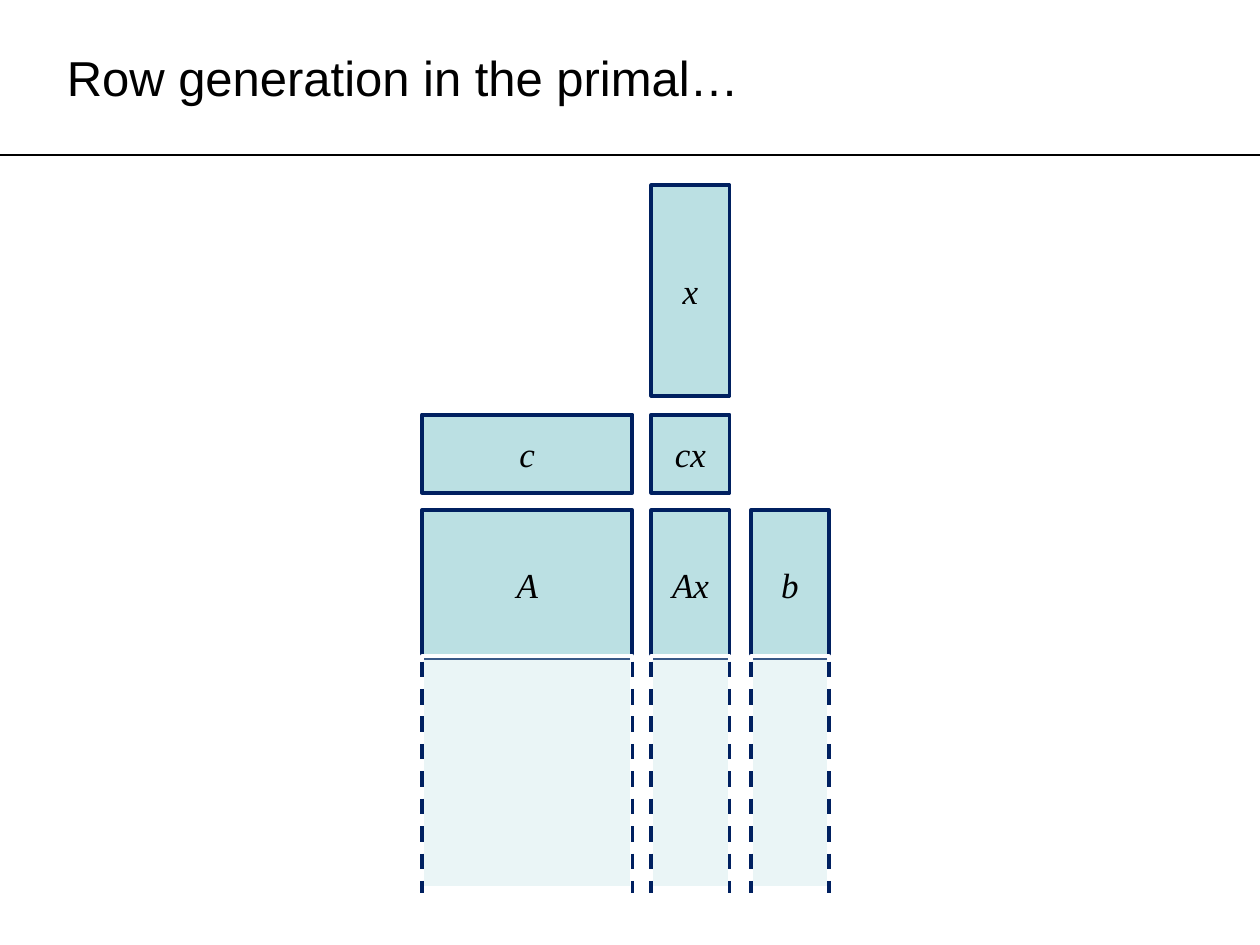
from dataclasses import dataclass

from lxml import etree
from pptx import Presentation
from pptx.dml.color import RGBColor
from pptx.enum.dml import MSO_LINE
from pptx.enum.shapes import MSO_CONNECTOR, MSO_SHAPE
from pptx.enum.text import MSO_ANCHOR, PP_ALIGN
from pptx.oxml.ns import qn
from pptx.util import Inches, Pt

STRAIGHT = MSO_CONNECTOR.STRAIGHT
RECTANGLE = MSO_SHAPE.RECTANGLE
DASH = MSO_LINE.DASH
MIDDLE = MSO_ANCHOR.MIDDLE
LEFT = PP_ALIGN.LEFT
CENTER = PP_ALIGN.CENTER


@dataclass(frozen=True)
class Theme:
    black: RGBColor = RGBColor.from_string("000000")
    white: RGBColor = RGBColor.from_string("FFFFFF")
    navy: RGBColor = RGBColor.from_string("002060")
    teal: RGBColor = RGBColor.from_string("BBE0E3")
    title_font: str = "Arial"
    math_font: str = "Times New Roman"
    title_size: Pt = Pt(28)
    math_size: Pt = Pt(20)
    rule_width: Pt = Pt(0.75)
    border_width: Pt = Pt(2.25)


THEME = Theme()

NARROW = 0.62
WIDE = 1.67
COLUMNS = {"A": (3.35, WIDE), "x": (5.17, NARROW), "b": (5.96, NARROW)}
ROWS = {"x": (1.47, WIDE), "c": (3.29, NARROW), "A": (4.05, 1.17)}
BLOCKS = [
    ("A", "A", "A"),
    ("Ax", "x", "A"),
    ("b", "b", "A"),
    ("cx", "x", "c"),
    ("c", "A", "c"),
    ("x", "x", "x"),
]
HIDDEN_TOP = 5.21
HIDDEN_HEIGHT = 1.84
DASH_TOP = 5.25


def format_text(paragraph, font_name, size, alignment, italic=False):
    paragraph.alignment = alignment
    paragraph.font.name = font_name
    paragraph.font.size = size
    paragraph.font.italic = italic
    paragraph.font.color.rgb = THEME.black


def set_title(slide, text):
    title = slide.shapes.title
    title.left, title.top = Inches(0.43), Inches(0.07)
    title.width, title.height = Inches(9.14), Inches(1.08)
    title.text_frame.text = text
    title.text_frame.vertical_anchor = MIDDLE
    format_text(title.text_frame.paragraphs[0], THEME.title_font, THEME.title_size, LEFT)


def add_line(slide, start, end, color, width, dash=None):
    line = slide.shapes.add_connector(STRAIGHT, *map(Inches, start + end))
    line.line.color.rgb = color
    line.line.width = width
    if dash is not None:
        line.line.dash_style = dash
    etree.SubElement(line.line._get_or_add_ln().getparent(), qn("a:effectLst"))


def add_box(slide, column, row, border):
    left, width = column
    top, height = row
    box = slide.shapes.add_shape(RECTANGLE, *map(Inches, (left, top, width, height)))
    box.shadow.inherit = False
    box.fill.solid()
    box.fill.fore_color.rgb = THEME.teal
    box.line.color.rgb = border
    box.line.width = THEME.border_width
    return box


def add_block(slide, label, column, row):
    frame = add_box(slide, column, row, THEME.navy).text_frame
    frame.word_wrap = False
    frame.vertical_anchor = MIDDLE
    frame.text = label
    format_text(frame.paragraphs[0], THEME.math_font, THEME.math_size, CENTER, italic=True)


def add_hidden_rows(slide, column):
    box = add_box(slide, column, (HIDDEN_TOP, HIDDEN_HEIGHT), THEME.white)
    color = box.element.spPr.find(qn("a:solidFill")).find(qn("a:srgbClr"))
    etree.SubElement(color, qn("a:alpha"), val="30000")


def add_dashed_sides(slide, column):
    left, width = column
    for x in (left, left + width):
        add_line(slide, (x, DASH_TOP), (x, DASH_TOP + HIDDEN_HEIGHT),
                 THEME.navy, THEME.border_width, DASH)


def main():
    presentation = Presentation()
    presentation.slide_width = Inches(10)
    presentation.slide_height = Inches(7.5)
    slide = presentation.slides.add_slide(presentation.slide_layouts[5])

    add_line(slide, (0, 1.23), (10, 1.23), THEME.black, THEME.rule_width)
    set_title(slide, "Row generation in the primal…")
    for label, column, row in BLOCKS:
        add_block(slide, label, COLUMNS[column], ROWS[row])
    for column in COLUMNS.values():
        add_hidden_rows(slide, column)
    for column in COLUMNS.values():
        add_dashed_sides(slide, column)

    presentation.save("out.pptx")


if __name__ == "__main__":
    main()
